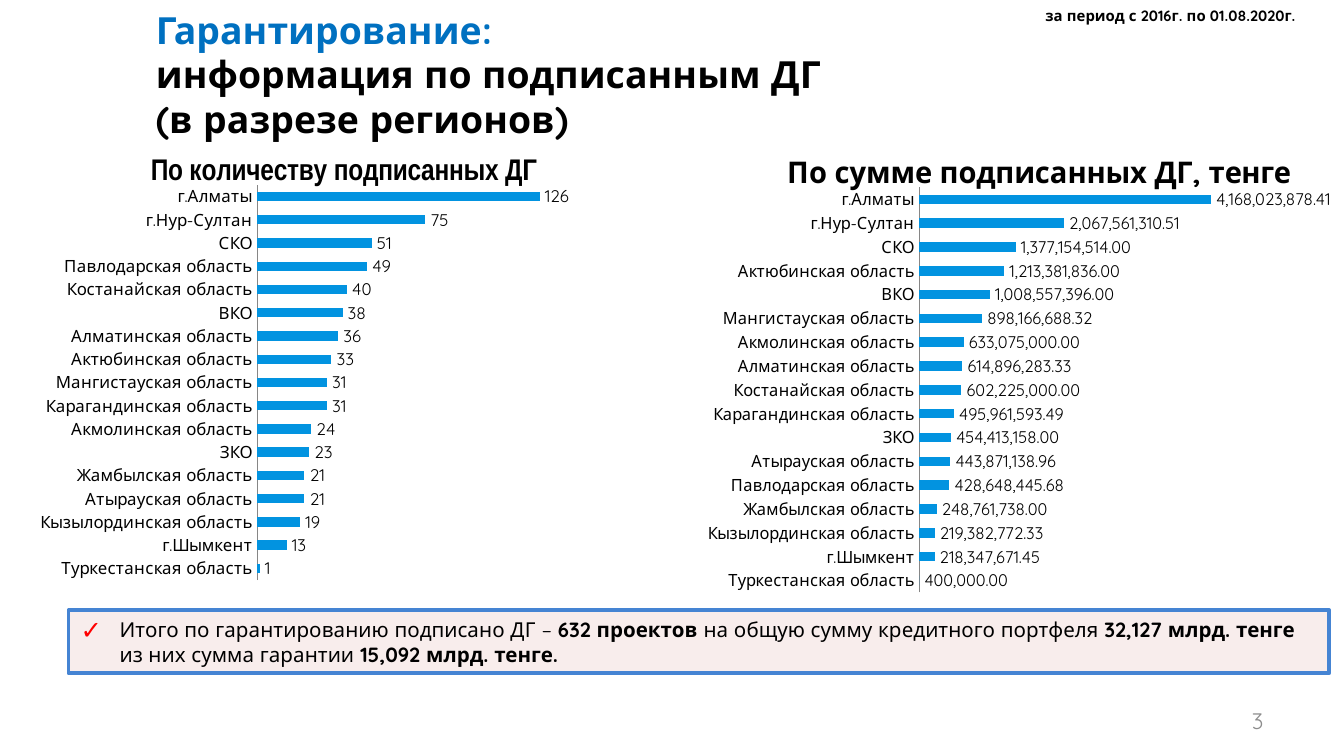
import dataclasses
import typing

import lxml.etree
import pptx
import pptx.chart.data
import pptx.dml.color
import pptx.enum.chart
import pptx.enum.shapes
import pptx.enum.text
import pptx.oxml
import pptx.oxml.ns
import pptx.util

Inches = pptx.util.Inches
Pt = pptx.util.Pt
qn = pptx.oxml.ns.qn
ALIGN = pptx.enum.text.PP_ALIGN
ANCHOR = pptx.enum.text.MSO_ANCHOR

FONT = "Quicksand"
COLORS = {
    "black": "000000", "heading": "0070C0", "bar": "0293E0", "axis": "868686",
    "total_fill": "F2DCDB", "total_line": "4584D3", "check": "FF0000", "number": "8C8C8C",
}


class Box(typing.NamedTuple):
    left: float
    top: float
    width: float
    height: float

    def lengths(self) -> list:
        return [Inches(value) for value in self]


@dataclasses.dataclass
class RegionChart:
    title: str
    title_font: str
    box: Box
    plot: Box  # fractions of the chart area
    axis_maximum: float
    number_format: str
    regions: dict[str, float]  # largest first
    title_corner: tuple[float, float] | None = None


CHARTS = [
    RegionChart(
        "По количеству подписанных ДГ", "Arial Narrow",
        Box(0.12, 1, 4.88, 3.51), Box(0.368, 0.107, 0.478, 0.838), 140, "General",
        {
            "г.Алматы": 126, "г.Нур-Султан": 75, "СКО": 51, "Павлодарская область": 49,
            "Костанайская область": 40, "ВКО": 38, "Алматинская область": 36,
            "Актюбинская область": 33, "Мангистауская область": 31,
            "Карагандинская область": 31, "Акмолинская область": 24, "ЗКО": 23,
            "Жамбылская область": 21, "Атырауская область": 21,
            "Кызылординская область": 19, "г.Шымкент": 13, "Туркестанская область": 1,
        },
    ),
    RegionChart(
        "По сумме подписанных ДГ, тенге", FONT,
        Box(4.95, 1.04, 4.95, 3.69), Box(0.392, 0.096, 0.486, 0.817), 4.5e9, "#,##0.00",
        {
            "г.Алматы": 4168023878.41, "г.Нур-Султан": 2067561310.51,
            "СКО": 1377154514, "Актюбинская область": 1213381836, "ВКО": 1008557396,
            "Мангистауская область": 898166688.32, "Акмолинская область": 633075000,
            "Алматинская область": 614896283.33, "Костанайская область": 602225000,
            "Карагандинская область": 495961593.49, "ЗКО": 454413158,
            "Атырауская область": 443871138.96, "Павлодарская область": 428648445.68,
            "Жамбылская область": 248761738, "Кызылординская область": 219382772.33,
            "г.Шымкент": 218347671.45, "Туркестанская область": 400000,
        },
        title_corner=(0.18, 0.01),
    ),
]

TOTAL_RUNS = [
    ("Итого по гарантированию подписано ДГ – ", False),
    ("632 проектов ", True),
    ("на общую сумму кредитного портфеля ", False),
    ("32,127 млрд. тенге ", True),
    ("из них сумма гарантии ", False),
    ("15,092 млрд. тенге.", True),
]


def color(name: str) -> pptx.dml.color.RGBColor:
    return pptx.dml.color.RGBColor.from_string(COLORS[name])


def set_font(font, size: float, color_name: str = "black", bold: bool | None = False,
             name: str = FONT) -> None:
    font.name, font.size, font.bold = name, Pt(size), bold
    font.color.rgb = color(color_name)


def set_layout(element, **values: float) -> None:
    """Place a chart title or plot area by fractions of the chart area."""
    for old in element.findall(qn("c:layout")):
        element.remove(old)
    layout = pptx.oxml.parse_xml(f'<c:layout {pptx.oxml.ns.nsdecls("c")}/>')
    manual = lxml.etree.SubElement(layout, qn("c:manualLayout"))
    if "w" in values:
        lxml.etree.SubElement(manual, qn("c:layoutTarget")).set("val", "inner")
    for tag in ("xMode", "yMode"):
        lxml.etree.SubElement(manual, qn(f"c:{tag}")).set("val", "edge")
    for tag, value in values.items():
        lxml.etree.SubElement(manual, qn(f"c:{tag}")).set("val", str(value))
    text = element.find(qn("c:tx"))
    if text is None:
        element.insert(0, layout)
    else:
        text.addnext(layout)


def add_region_chart(slide, item: RegionChart) -> None:
    data = pptx.chart.data.CategoryChartData(number_format=item.number_format)
    data.categories = list(reversed(item.regions))
    data.add_series("Series 1", list(reversed(item.regions.values())))
    chart = slide.shapes.add_chart(
        pptx.enum.chart.XL_CHART_TYPE.BAR_CLUSTERED, *item.box.lengths(), data).chart
    chart.has_legend = False
    set_font(chart.font, 9)

    title = chart.chart_title
    title.text_frame.text = item.title
    set_font(title.text_frame.paragraphs[0].runs[0].font, 16, bold=True, name=item.title_font)
    title.include_in_layout = False
    if item.title_corner:
        set_layout(title._element, x=item.title_corner[0], y=item.title_corner[1])
    plot_box = item.plot
    set_layout(chart._chartSpace.chart.plotArea, x=plot_box.left, y=plot_box.top,
               w=plot_box.width, h=plot_box.height)

    category_axis, value_axis = chart.category_axis, chart.value_axis
    category_axis.major_tick_mark = pptx.enum.chart.XL_TICK_MARK.NONE
    category_axis.format.line.color.rgb = color("axis")
    set_font(category_axis.tick_labels.font, 9)
    value_axis.visible = False
    value_axis.has_major_gridlines = False
    value_axis.minimum_scale, value_axis.maximum_scale = 0, item.axis_maximum

    plot = chart.plots[0]
    plot.gap_width = 150
    plot.vary_by_categories = False
    fill = plot.series[0].format.fill
    fill.solid()
    fill.fore_color.rgb = color("bar")
    plot.has_data_labels = True
    labels = plot.data_labels
    labels.show_value = True
    labels.number_format, labels.number_format_is_linked = item.number_format, False
    labels.position = pptx.enum.chart.XL_LABEL_POSITION.OUTSIDE_END
    set_font(labels.font, 9)


def add_label(slide, box: Box, text: str, size: float, color_name: str, bold: bool,
              alignment, anchor, wrap: bool) -> None:
    frame = slide.shapes.add_textbox(*box.lengths()).text_frame
    frame.word_wrap, frame.vertical_anchor = wrap, anchor
    paragraph = frame.paragraphs[0]
    paragraph.text, paragraph.alignment = text, alignment
    set_font(paragraph.font, size, color_name, bold)


def add_title(slide) -> None:
    title = slide.shapes.title
    title.left, title.top, title.width, title.height = Box(1.06, 0, 7.52, 0.64).lengths()
    frame = title.text_frame
    frame.auto_size = pptx.enum.text.MSO_AUTO_SIZE.NONE
    frame.vertical_anchor = ANCHOR.TOP
    frame.text = "Гарантирование: \vинформация по подписанным ДГ\n(в разрезе регионов)"
    for paragraph in frame.paragraphs:
        paragraph.alignment = ALIGN.LEFT
        set_font(paragraph.font, 20, bold=True)
    frame.paragraphs[0].runs[0].font.color.rgb = color("heading")


def add_total(slide) -> None:
    shape = slide.shapes.add_shape(
        pptx.enum.shapes.MSO_SHAPE.RECTANGLE, *Box(0.51, 4.54, 9.38, 0.47).lengths())
    shape.shadow.inherit = False
    shape.fill.solid()
    shape.fill.fore_color.rgb = color("total_fill")
    fill_color = shape._element.spPr.find(f".//{qn('a:srgbClr')}")
    lxml.etree.SubElement(fill_color, qn("a:alpha")).set("val", "50000")
    shape.line.color.rgb, shape.line.width = color("total_line"), Pt(2)

    frame = shape.text_frame
    frame.word_wrap, frame.vertical_anchor = True, ANCHOR.MIDDLE
    frame.margin_left, frame.margin_right = Inches(0.08), Inches(0.15)
    frame.margin_top = frame.margin_bottom = Inches(0.04)
    paragraph = frame.paragraphs[0]
    properties = paragraph._p.get_or_add_pPr()
    properties.set("marL", str(Inches(0.3)))
    properties.set("indent", str(Inches(-0.29)))
    bullet_color = lxml.etree.SubElement(properties, qn("a:buClr"))
    lxml.etree.SubElement(bullet_color, qn("a:srgbClr")).set("val", COLORS["check"])
    lxml.etree.SubElement(properties, qn("a:buSzPct")).set("val", "125000")
    lxml.etree.SubElement(properties, qn("a:buFont")).set("typeface", FONT)
    lxml.etree.SubElement(properties, qn("a:buChar")).set("char", "✓")
    paragraph.alignment = ALIGN.LEFT
    paragraph.space_after = Pt(6)
    set_font(paragraph.font, 11, bold=None)
    for text, bold in TOTAL_RUNS:
        run = paragraph.add_run()
        run.text, run.font.bold = text, bold
        run.font.color.rgb = color("black")


def main() -> None:
    presentation = pptx.Presentation()
    presentation.slide_width = Inches(10)
    presentation.slide_height = presentation.slide_width * 9 // 16
    slide = presentation.slides.add_slide(presentation.slide_layouts[5])
    add_label(slide, Box(7.17, 5.21, 2.33, 0.3), "3", 12, "number", False,
              ALIGN.RIGHT, ANCHOR.MIDDLE, True)
    add_title(slide)
    add_total(slide)
    add_label(slide, Box(7.68, 0, 2.09, 0.24), "за период с 2016г. по 01.08.2020г.", 8,
              "black", True, ALIGN.LEFT, ANCHOR.TOP, False)
    for item in CHARTS:
        add_region_chart(slide, item)
    presentation.save("out.pptx")


if __name__ == "__main__":
    main()
